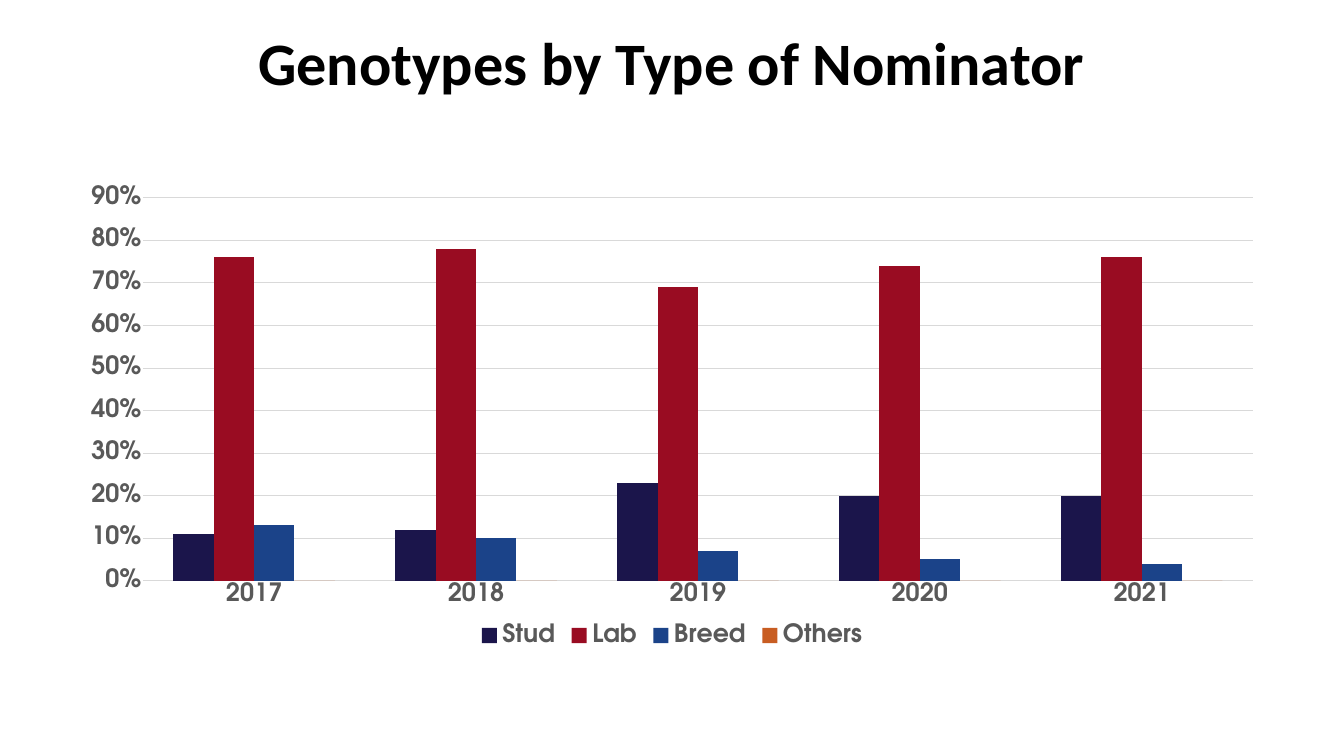
from pptx import Presentation
from pptx.chart.data import CategoryChartData
from pptx.dml.color import RGBColor
from pptx.enum import chart as ch, text
from pptx.util import Inches, Pt

YEARS = ["2017", "2018", "2019", "2020", "2021"]
NOMINATORS = [
    ("Stud", "1B154B", [0.11, 0.12, 0.23, 0.2, 0.2]),
    ("Lab", "990C22", [0.76, 0.78, 0.69, 0.74, 0.76]),
    ("Breed", "1B4389", [0.13, 0.1, 0.07, 0.05, 0.04]),
    ("Others", "C85D22", [0, 0, 0, 0, 0]),
]


def rgb(value):
    return RGBColor.from_string(value)


class Deck:
    title_font = dict(name="Calibri", size=Pt(86), bold=True)
    chart_font = dict(name="TeX Gyre Adventor", size=Pt(36), bold=True)
    black, grey, grid = "000000", "595959", "D9D9D9"

    def __init__(self, slide):
        self.s = slide

    def style(self, font, values, color):
        for key, value in values.items():
            setattr(font, key, value)
        font.color.rgb = rgb(color)

    def title(self, words, *box):
        sp = self.s.shapes.add_textbox(*map(Inches, box))
        tf = sp.text_frame
        frame = dict(word_wrap=True, vertical_anchor=text.MSO_ANCHOR.BOTTOM,
                     margin_left=Inches(0.24), margin_right=Inches(0.24),
                     margin_top=Inches(0.12), margin_bottom=Inches(0.12))
        for key, value in frame.items():
            setattr(tf, key, value)
        p = tf.paragraphs[0]
        p.alignment = text.PP_ALIGN.CENTER
        r = p.add_run()
        r.text = words
        self.style(r.font, self.title_font, self.black)

    def axis(self, axis):
        axis.major_tick_mark = axis.minor_tick_mark = ch.XL_TICK_MARK.NONE
        axis.format.line.fill.background()
        self.style(axis.tick_labels.font, self.chart_font, self.grey)

    def columns(self, categories, series, *box):
        data = CategoryChartData(number_format="0%")
        data.categories = categories
        for name, _, values in series:
            data.add_series(name, values)
        chart = self.s.shapes.add_chart(
            ch.XL_CHART_TYPE.COLUMN_CLUSTERED, *map(Inches, box), data).chart
        chart.has_title = False
        self.style(chart.font, dict(self.chart_font, size=Pt(10), bold=False), self.black)

        plot = chart.plots[0]
        plot.vary_by_categories = False
        plot.gap_width, plot.overlap = 150, 0
        for bars, (_, color, _) in zip(plot.series, series):
            bars.format.fill.solid()
            bars.format.fill.fore_color.rgb = rgb(color)

        self.axis(chart.category_axis)
        value_axis = chart.value_axis
        self.axis(value_axis)
        value_axis.minimum_scale, value_axis.maximum_scale = 0, 0.9
        value_axis.major_unit = 0.1
        value_axis.tick_labels.number_format = "0%"
        value_axis.tick_labels.number_format_is_linked = False
        value_axis.has_major_gridlines = True
        line = value_axis.major_gridlines.format.line
        line.width = Pt(0.75)
        line.color.rgb = rgb(self.grid)

        chart.has_legend = True
        chart.legend.position = ch.XL_LEGEND_POSITION.BOTTOM
        chart.legend.include_in_layout = False
        self.style(chart.legend.font, self.chart_font, self.grey)


def main():
    prs = Presentation()
    prs.slide_width, prs.slide_height = Inches(26.65), Inches(15)
    deck = Deck(prs.slides.add_slide(prs.slide_layouts[6]))
    deck.title("Genotypes by Type of Nominator", 1.33, 0.57, 23.98, 1.49)
    deck.columns(YEARS, NOMINATORS, 1.33, 3.5, 23.99, 9.44)
    prs.save("out.pptx")


if __name__ == "__main__":
    main()
